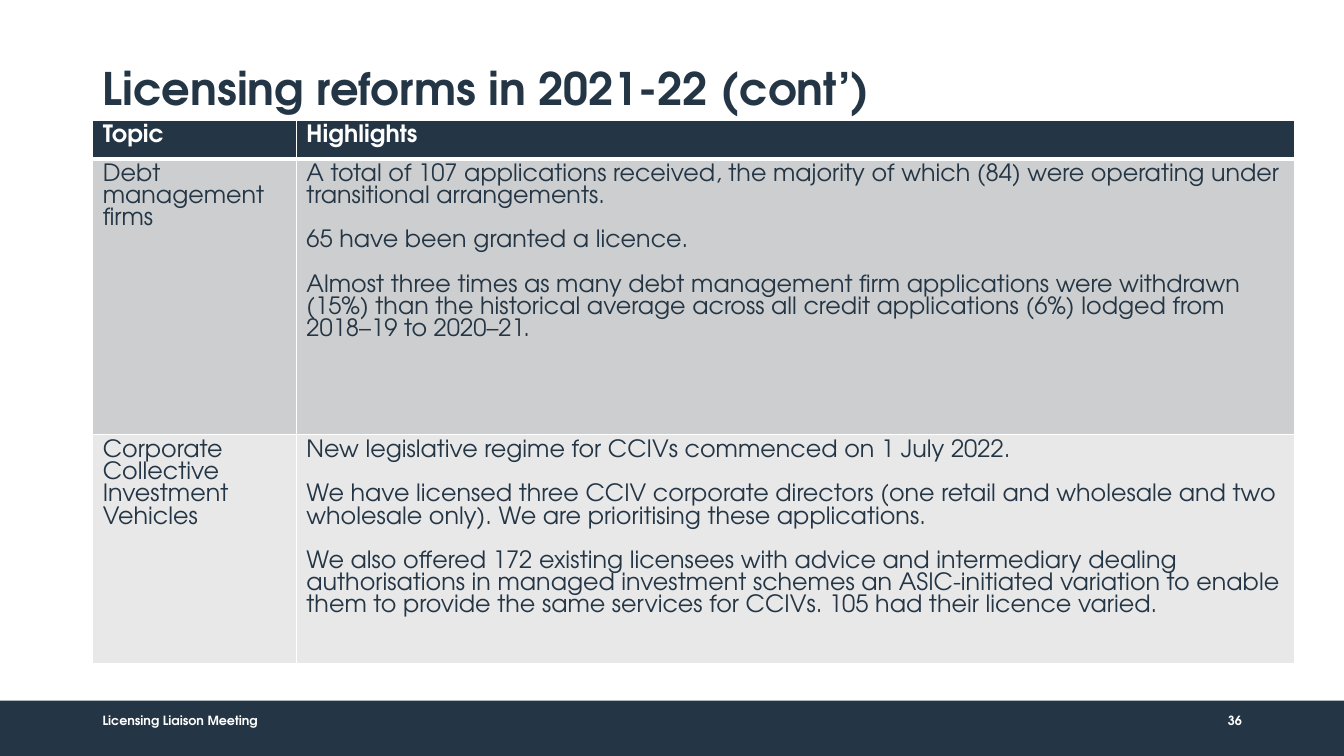
from lxml import etree
from pptx import Presentation
from pptx import util as u
from pptx.dml.color import RGBColor
from pptx.enum import shapes, text
from pptx.oxml import ns

Pt = u.Pt
FONT = "TeX Gyre Adventor"
COLOURS = {"navy": "243645", "white": "FFFFFF", "grey": "CDCECF", "pale": "E8E8E9"}
LEFT = 66.24
FOOTER_TOP = 500.4
TEXT_SIZE = 17
PARAGRAPH_GAP = 15.86  # one line of table text

COLUMN_WIDTHS = [145.44, 712.8]
ROW_HEIGHTS = [26.64, 197.28, 163.44]
ROW_FILLS = ["navy", "grey", "pale"]
TOPICS = [
    (["Topic"], ["Highlights"]),
    (["Debt management firms"], [
        "A total of 107 applications received, the majority of which (84) were "
        "operating under transitional arrangements.",
        "65 have been granted a licence.",
        "Almost three times as many debt management firm applications were withdrawn "
        "(15%) than the historical average across all credit applications (6%) lodged "
        "from 2018–19 to 2020–21.",
    ]),
    (["Corporate Collective Investment Vehicles"], [
        "New legislative regime for CCIVs commenced on 1 July 2022.",
        "We have licensed three CCIV corporate directors (one retail and wholesale and "
        "two wholesale only). We are prioritising these applications.",
        "We also offered 172 existing licensees with advice and intermediary dealing "
        "authorisations in managed investment schemes an ASIC-initiated variation to "
        "enable them to provide the same services for CCIVs. 105 had their licence varied.",
    ]),
]


def colour(name):
    return RGBColor.from_string(COLOURS[name])


def write(frame, lines, size, ink, bold, **para_format):
    """Fill a text frame with one paragraph per line."""
    for index, line in enumerate(lines):
        para = frame.add_paragraph() if index else frame.paragraphs[0]
        if index:
            para.space_before = Pt(PARAGRAPH_GAP)
        for name, value in para_format.items():
            setattr(para, name, value)
        span = para.add_run()
        span.text = line
        for name, value in {"name": FONT, "size": Pt(size), "bold": bold}.items():
            setattr(span.font, name, value)
        span.font.color.rgb = colour(ink)


def add_label(page, line, place, size, ink, margin_left=7.2, **para_format):
    """Add a bold, vertically centred line of text."""
    box = page.shapes.add_textbox(*map(Pt, place))
    frame_format = {
        "word_wrap": True,
        "vertical_anchor": text.MSO_ANCHOR.MIDDLE,
        "margin_left": Pt(margin_left),
    }
    for name, value in frame_format.items():
        setattr(box.text_frame, name, value)
    write(box.text_frame, [line], size, ink, True, **para_format)


def add_band(page, place, fill):
    band = page.shapes.add_shape(shapes.MSO_SHAPE.RECTANGLE, *map(Pt, place))
    band.shadow.inherit = False
    band.fill.solid()
    band.fill.fore_color.rgb = colour(fill)
    band.line.fill.background()


def add_borders(cell, widths):
    """Draw white cell edges, given widths by side."""
    properties = cell._tc.get_or_add_tcPr()
    for side, width in widths.items():
        line = etree.SubElement(properties, ns.qn(f"a:ln{side}"), w=str(Pt(width)))
        fill = etree.SubElement(line, ns.qn("a:solidFill"))
        etree.SubElement(fill, ns.qn("a:srgbClr"), val=COLOURS["white"])


def add_topic_table(page, left, top):
    size = (sum(COLUMN_WIDTHS), sum(ROW_HEIGHTS))
    table = page.shapes.add_table(
        len(TOPICS), len(COLUMN_WIDTHS), *map(Pt, (left, top, *size))).table
    for column, width in zip(table.columns, COLUMN_WIDTHS):
        column.width = Pt(width)
    for index, (row, height) in enumerate(zip(table.rows, ROW_HEIGHTS)):
        row.height = Pt(height)
        header = index == 0
        edges = {"L": 1, "R": 1, "T": 3 if index == 1 else 1, "B": 3 if header else 1}
        for cell, lines in zip(row.cells, TOPICS[index]):
            add_borders(cell, edges)
            cell.fill.solid()
            cell.fill.fore_color.rgb = colour(ROW_FILLS[index])
            write(cell.text_frame, lines, TEXT_SIZE, "white" if header else "navy", header)


def main():
    deck = Presentation()
    deck.slide_width, deck.slide_height = Pt(960), Pt(540)
    page = deck.slides.add_slide(deck.slide_layouts[6])

    # Footer band and title
    add_band(page, (0, FOOTER_TOP, 960, 540 - FOOTER_TOP), "navy")
    add_label(page, "Licensing reforms in 2021-22 (cont’)", (LEFT, 28.8, 828, 72),
              32, "navy", line_spacing=0.9)

    # Footer text
    add_label(page, "Licensing Liaison Meeting", (LEFT, FOOTER_TOP, 575.28, 28.8), 9, "white")
    add_label(page, "36", (865.44, FOOTER_TOP, 28.8, 28.8), 9, "white",
              margin_left=0, alignment=text.PP_ALIGN.RIGHT)

    # Topics and highlights
    add_topic_table(page, LEFT, 85.68)

    deck.save("out.pptx")


if __name__ == "__main__":
    main()
